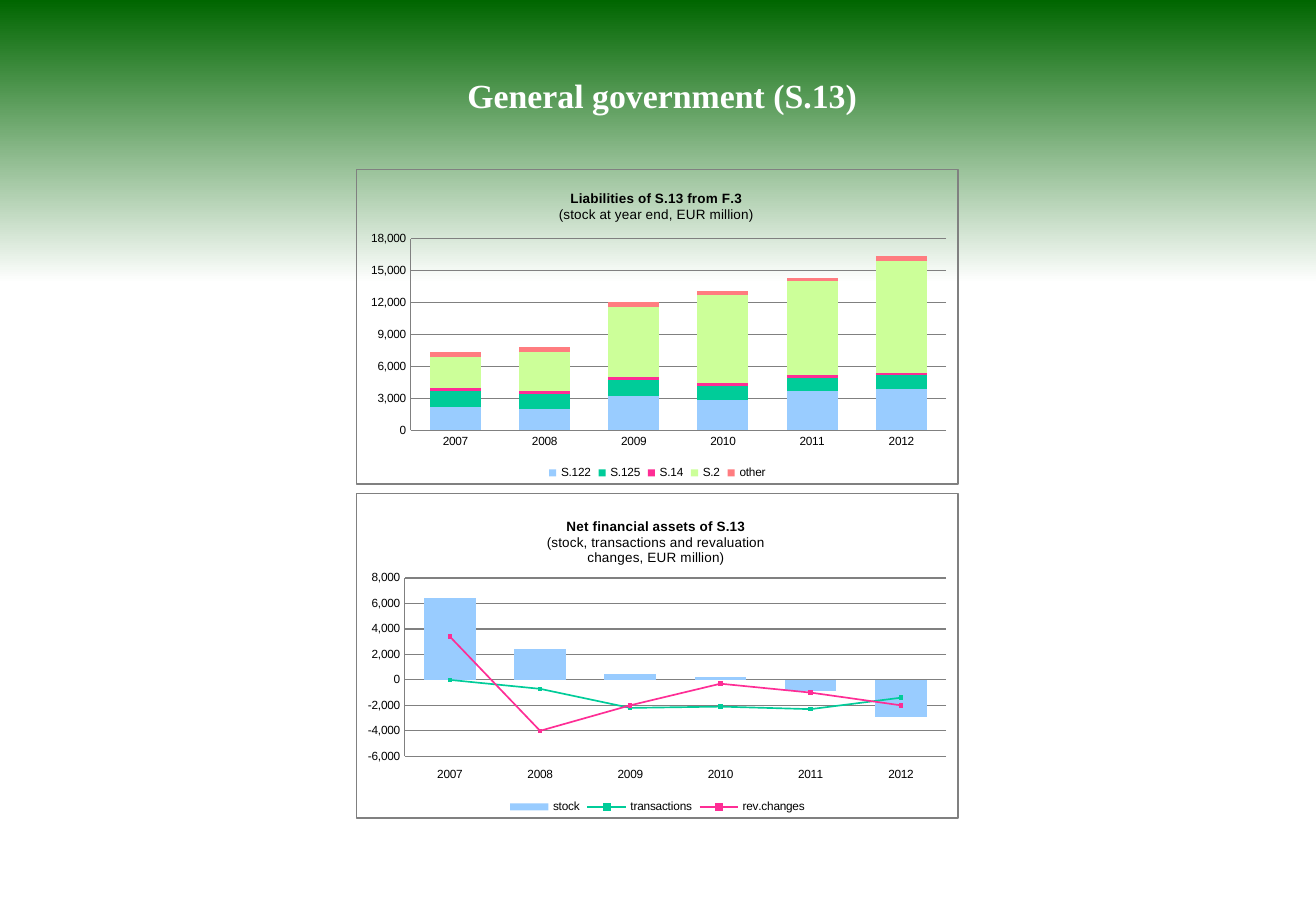
from dataclasses import dataclass

from lxml import etree
from pptx import Presentation
from pptx.chart.chart import Chart
from pptx.chart.data import CategoryChartData
from pptx.dml.color import RGBColor
from pptx.enum.chart import (XL_CHART_TYPE, XL_LEGEND_POSITION,
                             XL_MARKER_STYLE, XL_TICK_LABEL_POSITION,
                             XL_TICK_MARK)
from pptx.enum.shapes import MSO_SHAPE
from pptx.enum.text import MSO_ANCHOR, PP_ALIGN
from pptx.oxml import parse_xml
from pptx.util import Inches, Pt

STACKED = XL_CHART_TYPE.COLUMN_STACKED
BOTTOM = XL_LEGEND_POSITION.BOTTOM
SQUARE = XL_MARKER_STYLE.SQUARE
LOW = XL_TICK_LABEL_POSITION.LOW
NO_TICK = XL_TICK_MARK.NONE
MIDDLE = MSO_ANCHOR.MIDDLE
CENTER = PP_ALIGN.CENTER
RECTANGLE = MSO_SHAPE.RECTANGLE

COLORS = {
    "forest": "006600", "white": "FFFFFF", "black": "000000", "grey": "808080",
    "blue": "99CCFF", "teal": "00CC99", "pink": "FE2D95",
    "lime": "CCFF99", "coral": "FF7C80",
}
C_NS = "http://schemas.openxmlformats.org/drawingml/2006/chart"
A_NS = "http://schemas.openxmlformats.org/drawingml/2006/main"
YEARS = [str(year) for year in range(2007, 2013)]


@dataclass(frozen=True)
class Series:
    name: str
    values: tuple[int, ...]
    color: str
    is_line: bool = False


@dataclass(frozen=True)
class ChartPanel:
    top: float
    height: float
    title: tuple[str, ...]
    title_at: tuple[float, float]
    plot_box: tuple[float, float, float, float]
    value_range: tuple[int, int, int]
    series: tuple[Series, ...]


PANELS = (
    ChartPanel(
        1.39, 2.6,
        ("Liabilities of S.13 from F.3", "(stock at year end, EUR million)"),
        (0.33, 0.05), (0.09, 0.22, 0.89, 0.61), (0, 18000, 3000),
        (Series("S.122", (2200, 2000, 3200, 2900, 3700, 3900), "blue"),
         Series("S.125", (1500, 1400, 1500, 1300, 1200, 1300), "teal"),
         Series("S.14", (300, 300, 300, 300, 300, 200), "pink"),
         Series("S.2", (2900, 3700, 6600, 8200, 8800, 10500), "lime"),
         Series("other", (500, 400, 500, 400, 300, 500), "coral"))),
    ChartPanel(
        4.06, 2.68,
        ("Net financial assets of S.13", "(stock, transactions and revaluation",
         "changes, EUR million)"),
        (0.31, 0.06), (0.08, 0.26, 0.9, 0.55), (-6000, 8000, 2000),
        (Series("stock", (6400, 2400, 500, 200, -900, -2900), "blue"),
         Series("transactions", (0, -700, -2200, -2100, -2300, -1400),
                "teal", True),
         Series("rev.changes", (3400, -3300, 200, 1800, 1300, -600),
                "pink", True))),
)


def rgb(name: str) -> RGBColor:
    return RGBColor.from_string(COLORS[name])


def set_font(font, size: float, color: str, face: str, bold: bool = False) -> None:
    font.size, font.name, font.bold = Pt(size), face, bold
    font.color.rgb = rgb(color)


def set_line(line, color: str, width: float) -> None:
    line.color.rgb = rgb(color)
    line.width = Pt(width)


def place(parent, index: int, **fractions: float) -> None:
    """Give a chart part a manual layout in fractions of the chart."""
    for old in parent.findall(f"{{{C_NS}}}layout"):
        parent.remove(old)
    layout = etree.Element(f"{{{C_NS}}}layout")
    manual = etree.SubElement(layout, f"{{{C_NS}}}manualLayout")
    settings = {"layoutTarget": "inner"} if "w" in fractions else {}
    settings |= {"xMode": "edge", "yMode": "edge"}
    settings |= {key: str(value) for key, value in fractions.items()}
    for tag, value in settings.items():
        etree.SubElement(manual, f"{{{C_NS}}}{tag}", val=value)
    parent.insert(index, layout)


def move_to_line_plot(chart: Chart, first: int) -> None:
    """Move the series from index first onward to a stacked line plot."""
    bars = chart.element.xpath("c:chart/c:plotArea/c:barChart")[0]
    lines = parse_xml(f'<c:lineChart xmlns:c="{C_NS}"><c:grouping val="stacked"/>'
                      '<c:varyColors val="0"/></c:lineChart>')
    for series in bars.xpath("c:ser")[first:]:
        for invert in series.xpath("c:invertIfNegative"):
            series.remove(invert)
        lines.append(series)
    etree.SubElement(lines, f"{{{C_NS}}}marker", val="1")
    for axis in bars.xpath("c:axId"):
        etree.SubElement(lines, f"{{{C_NS}}}axId", val=axis.get("val"))
    bars.addnext(lines)


def style_axes(chart: Chart, panel: ChartPanel) -> None:
    for axis in (chart.category_axis, chart.value_axis):
        axis.major_tick_mark = axis.minor_tick_mark = NO_TICK
        set_font(axis.tick_labels.font, 7, "black", "Arial")
        set_line(axis.format.line, "grey", 0.75)
    values = chart.value_axis
    values.minimum_scale, values.maximum_scale, values.major_unit = panel.value_range
    values.has_major_gridlines = True
    set_line(values.major_gridlines.format.line, "grey", 0.75)
    values.tick_labels.number_format = "#,##0"
    values.tick_labels.number_format_is_linked = False
    if panel.value_range[0] < 0:
        chart.category_axis.tick_label_position = LOW


def style_series(chart: Chart, panel: ChartPanel) -> None:
    bars = chart.plots[0]
    bars.gap_width, bars.overlap, bars.vary_by_categories = 75, 100, False
    drawn = [series for plot in chart.plots for series in plot.series]
    for series, entry in zip(drawn, panel.series):
        if entry.is_line:
            series.smooth = False
            set_line(series.format.line, entry.color, 1)
            series.marker.style, series.marker.size = SQUARE, 2
            parts = (series.marker.format.fill, series.marker.format.line.fill)
        else:
            series.invert_if_negative = False
            parts = (series.format.fill,)
        for fill in parts:
            fill.solid()
            fill.fore_color.rgb = rgb(entry.color)


def add_title(chart: Chart, panel: ChartPanel) -> None:
    chart.has_title = True
    frame = chart.chart_title.text_frame
    for number, text in enumerate(panel.title):
        line = frame.add_paragraph() if number else frame.paragraphs[0]
        line.text, line.alignment = text, CENTER
        set_font(line.font, 8, "black", "Arial", bold=number == 0)
    x, y = panel.title_at
    place(chart.element.xpath("c:chart/c:title")[0], 1, x=x, y=y)


def add_panel(slide, panel: ChartPanel) -> None:
    data = CategoryChartData(number_format="#,##0")
    data.categories = YEARS
    for entry in panel.series:
        data.add_series(entry.name, entry.values)
    chart = slide.shapes.add_chart(STACKED, Inches(2.93), Inches(panel.top),
                                   Inches(4.96), Inches(panel.height), data).chart
    set_font(chart.font, 10, "black", "Times New Roman")
    bar_count = sum(not entry.is_line for entry in panel.series)
    if bar_count < len(panel.series):
        move_to_line_plot(chart, bar_count)
    style_series(chart, panel)
    style_axes(chart, panel)
    add_title(chart, panel)
    chart.has_legend = True
    chart.legend.position, chart.legend.include_in_layout = BOTTOM, False
    set_font(chart.legend.font, 7, "black", "Arial")

    # Plot position and chart border
    x, y, w, h = panel.plot_box
    place(chart.element.xpath("c:chart/c:plotArea")[0], 0, x=x, y=y, w=w, h=h)
    chart.element.xpath("c:chart")[0].addnext(parse_xml(
        f'<c:spPr xmlns:c="{C_NS}" xmlns:a="{A_NS}"><a:noFill/><a:ln w="{Pt(0.75)}">'
        f'<a:solidFill><a:srgbClr val="{COLORS["grey"]}"/></a:solidFill></a:ln></c:spPr>'))


def main() -> None:
    deck = Presentation()
    deck.slide_width, deck.slide_height = Inches(10.83), Inches(7.5)
    slide = deck.slides.add_slide(deck.slide_layouts[6])

    # Green band fading to white
    band = slide.shapes.add_shape(RECTANGLE, 0, 0, deck.slide_width, Inches(2.33))
    band.shadow.inherit = False
    band.line.fill.background()
    band.fill.gradient()
    band.fill.gradient_angle = 270
    for stop, color in zip(band.fill.gradient_stops, ("forest", "white")):
        stop.color.rgb = rgb(color)

    # Heading, set slightly right of centre
    heading = slide.shapes.add_textbox(Inches(0.68), Inches(0.47),
                                       Inches(9.21), Inches(0.63)).text_frame
    heading.word_wrap, heading.vertical_anchor = True, MIDDLE
    heading.margin_left = Inches(0.43)
    line = heading.paragraphs[0]
    line.text, line.alignment = "General government (S.13)", CENTER
    set_font(line.font, 20, "white", "Times New Roman", bold=True)

    # Charts
    for panel in PANELS:
        add_panel(slide, panel)
    deck.save("out.pptx")


if __name__ == "__main__":
    main()
